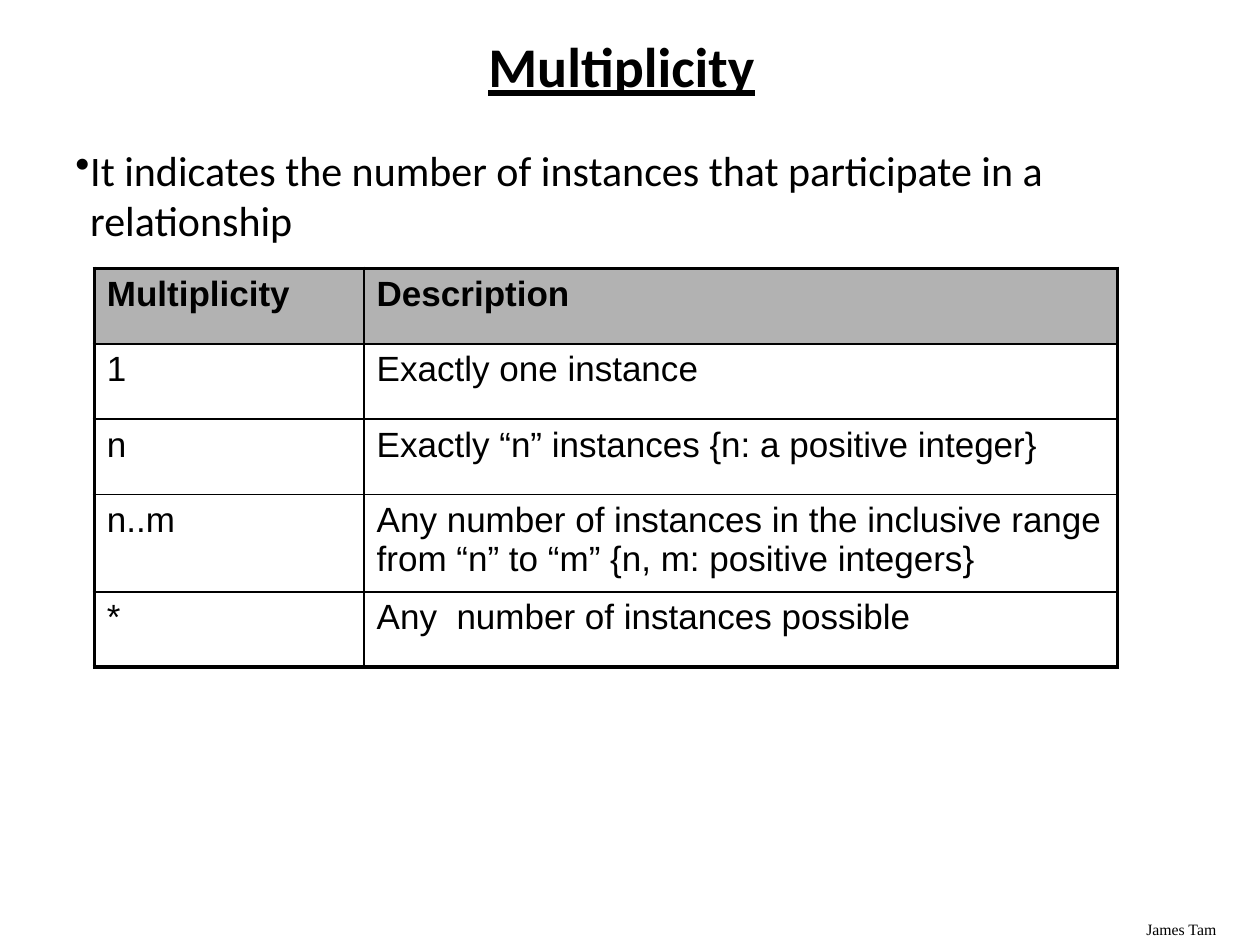
from lxml import etree
from pptx import Presentation
from pptx.dml.color import RGBColor
from pptx.enum.text import MSO_ANCHOR, PP_ALIGN
from pptx.oxml.ns import qn
from pptx.util import Cm, Pt

CENTER = PP_ALIGN.CENTER
MIDDLE = MSO_ANCHOR.MIDDLE
BLACK = RGBColor(0x00, 0x00, 0x00)
WHITE = RGBColor(0xFF, 0xFF, 0xFF)
HEADER_GRAY = RGBColor(0xB2, 0xB2, 0xB2)
OUTER_LINE = Pt(2.25)
INNER_LINE = Pt(1)

COLUMN_WIDTHS = (5.44, 15.19)
ROW_HEIGHTS = (1.52, 1.52, 1.52, 1.96, 1.52)
ROWS = (
    ("Multiplicity", "Description"),
    ("1", "Exactly one instance"),
    ("n", "Exactly “n” instances {n: a positive integer}"),
    ("n..m", "Any number of instances in the inclusive range "
             "from “n” to “m” {n, m: positive integers}"),
    ("*", "Any  number of instances possible"),
)


def format_text(paragraph, font_name, size, bold=False, underline=False):
    for run in paragraph.runs:
        run.font.name = font_name
        run.font.size = Pt(size)
        run.font.bold = bold
        run.font.underline = underline
        run.font.color.rgb = BLACK


def add_text(slide, text, left, top, width, height):
    shape = slide.shapes.add_textbox(Cm(left), Cm(top), Cm(width), Cm(height))
    text_frame = shape.text_frame
    text_frame.word_wrap = True
    text_frame.text = text
    return text_frame


def set_relative_space_before(paragraph, percent):
    properties = paragraph._p.get_or_add_pPr()
    space = etree.SubElement(properties, qn("a:spcBef"))
    etree.SubElement(space, qn("a:spcPct"), val=str(percent * 1000))
    return properties


def add_bullet(paragraph):
    properties = set_relative_space_before(paragraph, 30)
    indent = Cm(0.3)
    properties.set("marL", str(indent))
    properties.set("indent", str(-indent))
    etree.SubElement(properties, qn("a:buChar"), char="•")


def set_borders(cell, widths):
    properties = cell._tc.get_or_add_tcPr()
    for side, width in zip("LRTB", widths):
        line = etree.SubElement(properties, qn(f"a:ln{side}"), w=str(width))
        fill = etree.SubElement(line, qn("a:solidFill"))
        etree.SubElement(fill, qn("a:srgbClr"), val=str(BLACK))


def edge_width(is_outer):
    return OUTER_LINE if is_outer else INNER_LINE


def fill_cell(cell, text, row, column):
    is_header = row == 0
    set_borders(cell, (
        edge_width(column == 0),
        edge_width(column == len(COLUMN_WIDTHS) - 1),
        edge_width(is_header),
        edge_width(row == len(ROWS) - 1),
    ))
    cell.fill.solid()
    cell.fill.fore_color.rgb = HEADER_GRAY if is_header else WHITE
    cell.text_frame.text = text
    paragraph = cell.text_frame.paragraphs[0]
    set_relative_space_before(paragraph, 30)
    format_text(paragraph, "Arial", 20, bold=is_header)


def add_multiplicity_table(slide):
    frame = slide.shapes.add_table(
        len(ROWS), len(COLUMN_WIDTHS), Cm(1.9), Cm(5.41),
        Cm(sum(COLUMN_WIDTHS)), Cm(sum(ROW_HEIGHTS)))
    table = frame.table
    for column, width in zip(table.columns, COLUMN_WIDTHS):
        column.width = Cm(width)
    for row, height in zip(table.rows, ROW_HEIGHTS):
        row.height = Cm(height)
    for row, texts in enumerate(ROWS):
        for column, text in enumerate(texts):
            fill_cell(table.cell(row, column), text, row, column)


def add_title(slide):
    text_frame = add_text(slide, "Multiplicity", 1.19, 0.51, 22.68, 1.78)
    text_frame.vertical_anchor = MIDDLE
    paragraph = text_frame.paragraphs[0]
    paragraph.alignment = CENTER
    paragraph.line_spacing = 0.9
    format_text(paragraph, "Calibri", 32, bold=True, underline=True)


def add_definition(slide):
    text_frame = add_text(
        slide,
        "It indicates the number of instances that participate in a relationship",
        1.27, 2.79, 22.71, 15.19)
    paragraph = text_frame.paragraphs[0]
    add_bullet(paragraph)
    format_text(paragraph, "Calibri", 24)


def add_author(slide):
    text_frame = add_text(slide, "James Tam", 22.86, 18.41, 2.54, 0.64)
    format_text(text_frame.paragraphs[0], "Times New Roman", 9)


def main():
    presentation = Presentation()
    presentation.slide_width = Cm(25.4)
    presentation.slide_height = Cm(19.05)
    slide = presentation.slides.add_slide(presentation.slide_layouts[6])
    add_author(slide)
    add_title(slide)
    add_definition(slide)
    add_multiplicity_table(slide)
    presentation.save("out.pptx")


if __name__ == "__main__":
    main()
